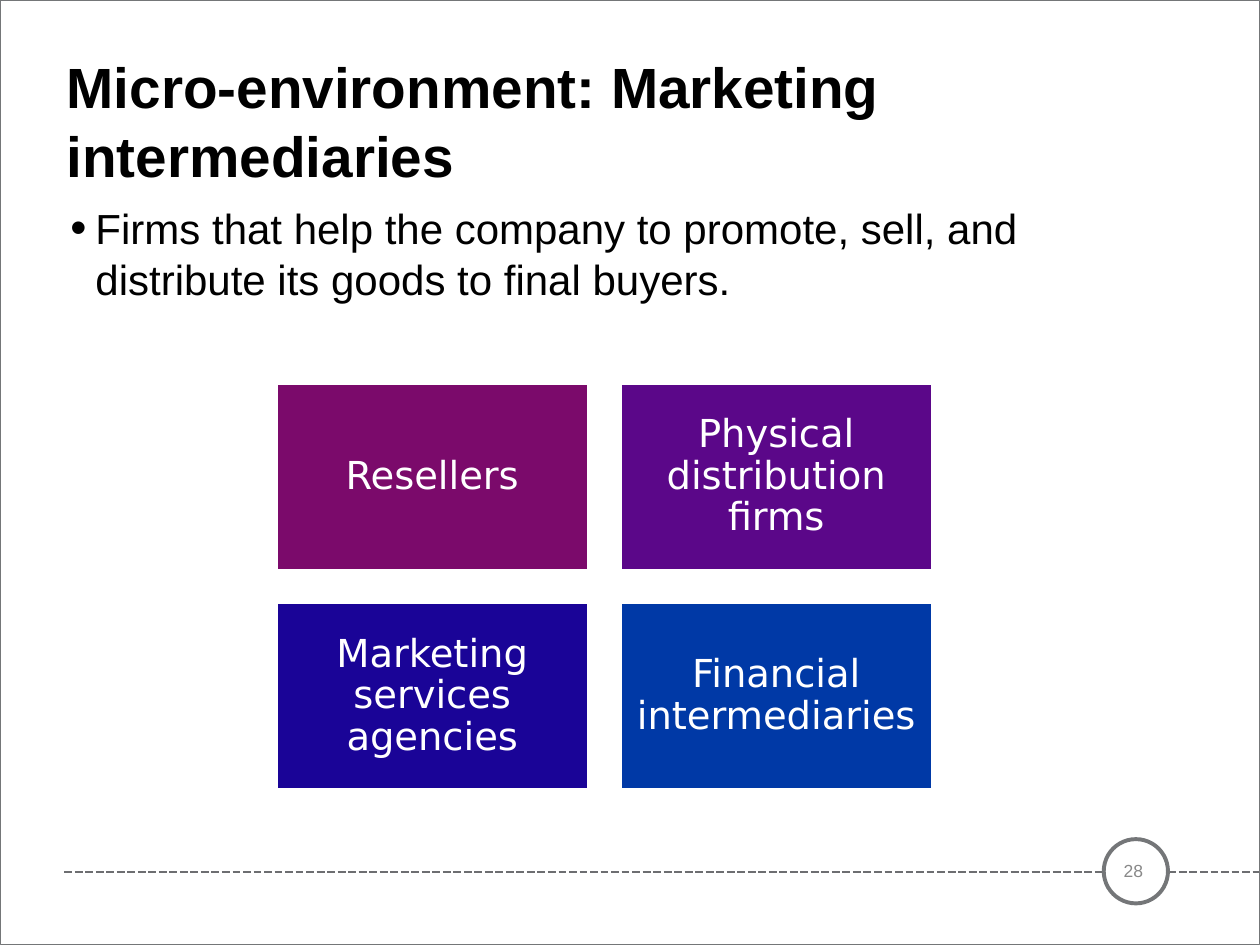
from dataclasses import dataclass

from lxml.etree import SubElement
from pptx import Presentation
from pptx.dml.color import RGBColor
from pptx.enum.dml import MSO_LINE
from pptx.enum.shapes import MSO_CONNECTOR, MSO_SHAPE
from pptx.enum.text import MSO_ANCHOR, PP_ALIGN
from pptx.oxml.ns import qn
from pptx.util import Inches, Pt


@dataclass(frozen=True)
class Theme:
    font: str = "Arial"
    tile_font: str = "DejaVu Sans"
    black: str = "000000"
    white: str = "FFFFFF"
    gray: str = "747678"
    rule: str = "6D6E71"
    number: str = "898989"
    title_size: float = 32.4
    body_size: float = 24
    tile_size: float = 22
    number_size: float = 10


@dataclass(frozen=True)
class Box:
    left: float
    top: float
    width: float
    height: float

    def lengths(self):
        return [Inches(v) for v in (self.left, self.top, self.width, self.height)]


@dataclass(frozen=True)
class Tile:
    label: str
    color: str


THEME = Theme()
TILES = [
    Tile("Resellers", "7B0A6B"),
    Tile("Physical distribution firms", "5B0789"),
    Tile("Marketing services agencies", "1A0497"),
    Tile("Financial intermediaries", "0039A6"),
]
FIRST_TILE = Box(2.19, 3.04, 2.48, 1.49)
COLUMNS, COLUMN_STEP, ROW_STEP = 2, 2.73, 1.74


def rgb(color: str) -> RGBColor:
    return RGBColor.from_string(color)


def write(sp, text: str, size: float, color: str, font: str = THEME.font,
          bold: bool = False, align=PP_ALIGN.LEFT, anchor=MSO_ANCHOR.MIDDLE):
    """Put one formatted paragraph in a shape and return it."""
    tf = sp.text_frame
    tf.text = text
    tf.word_wrap = True
    tf.vertical_anchor = anchor
    p = tf.paragraphs[0]
    p.alignment = align
    f = p.runs[0].font
    f.name, f.size, f.bold = font, Pt(size), bold
    f.color.rgb = rgb(color)
    return p


def add_text(s, box: Box, text: str, size: float, color: str, **style):
    return write(s.shapes.add_textbox(*box.lengths()), text, size, color, **style)


def add_outlined(s, kind, box: Box, fill: str | None, line: str, width: float):
    sp = s.shapes.add_shape(kind, *box.lengths())
    sp.shadow.inherit = False
    if fill:
        sp.fill.solid()
        sp.fill.fore_color.rgb = rgb(fill)
    else:
        sp.fill.background()
    sp.line.color.rgb = rgb(line)
    sp.line.width = Pt(width)
    return sp


def add_bullet(p, indent: float) -> None:
    pPr = p._p.get_or_add_pPr()
    pPr.set("marL", str(Inches(indent)))
    pPr.set("indent", str(-Inches(indent)))
    SubElement(pPr, qn("a:buSzPct"), val="110000")
    SubElement(pPr, qn("a:buFont"), typeface=THEME.font)
    SubElement(pPr, qn("a:buChar"), char="•")


def add_footer_rule(s) -> None:
    y = Inches(6.92)
    rule = s.shapes.add_connector(MSO_CONNECTOR.STRAIGHT, Inches(0.51), y, Inches(10), y)
    rule.line.color.rgb = rgb(THEME.rule)
    rule.line.width = Pt(1.5)
    rule.line.dash_style = MSO_LINE.SQUARE_DOT
    SubElement(rule._element.spPr, qn("a:effectLst"))


def add_tile(s, tile: Tile, index: int) -> None:
    row, column = divmod(index, COLUMNS)
    first = FIRST_TILE
    box = Box(first.left + column * COLUMN_STEP, first.top + row * ROW_STEP,
              first.width, first.height)
    sp = add_outlined(s, MSO_SHAPE.RECTANGLE, box, tile.color, THEME.white, 2)
    tf = sp.text_frame
    tf.margin_left = tf.margin_right = tf.margin_top = tf.margin_bottom = Inches(0.09)
    p = write(sp, tile.label, THEME.tile_size, THEME.white,
              font=THEME.tile_font, align=PP_ALIGN.CENTER)
    p.line_spacing = 0.9


def main() -> None:
    prs = Presentation()
    prs.slide_width, prs.slide_height = Inches(10), Inches(7.5)
    s = prs.slides.add_slide(prs.slide_layouts[6])

    add_footer_rule(s)
    add_outlined(s, MSO_SHAPE.OVAL, Box(8.76, 6.66, 0.51, 0.51),
                 THEME.white, THEME.gray, 2.25)
    add_outlined(s, MSO_SHAPE.RECTANGLE, Box(0, 0, 10, 7.5), None, THEME.gray, 0.5)

    p = add_text(s, Box(0.46, 1.56, 8.96, 4.86),
                 "Firms that help the company to promote, sell, and "
                 "distribute its goods to final buyers.",
                 THEME.body_size, THEME.black, anchor=MSO_ANCHOR.TOP)
    add_bullet(p, 0.2)
    add_text(s, Box(0.43, 0.6, 8.91, 0.71), "Micro-environment: Marketing intermediaries",
             THEME.title_size, THEME.black, bold=True)
    add_text(s, Box(8.78, 6.68, 0.43, 0.45), "28", THEME.number_size, THEME.number,
             align=PP_ALIGN.CENTER)

    for i, tile in enumerate(TILES):
        add_tile(s, tile, i)

    prs.save("out.pptx")


if __name__ == "__main__":
    main()
